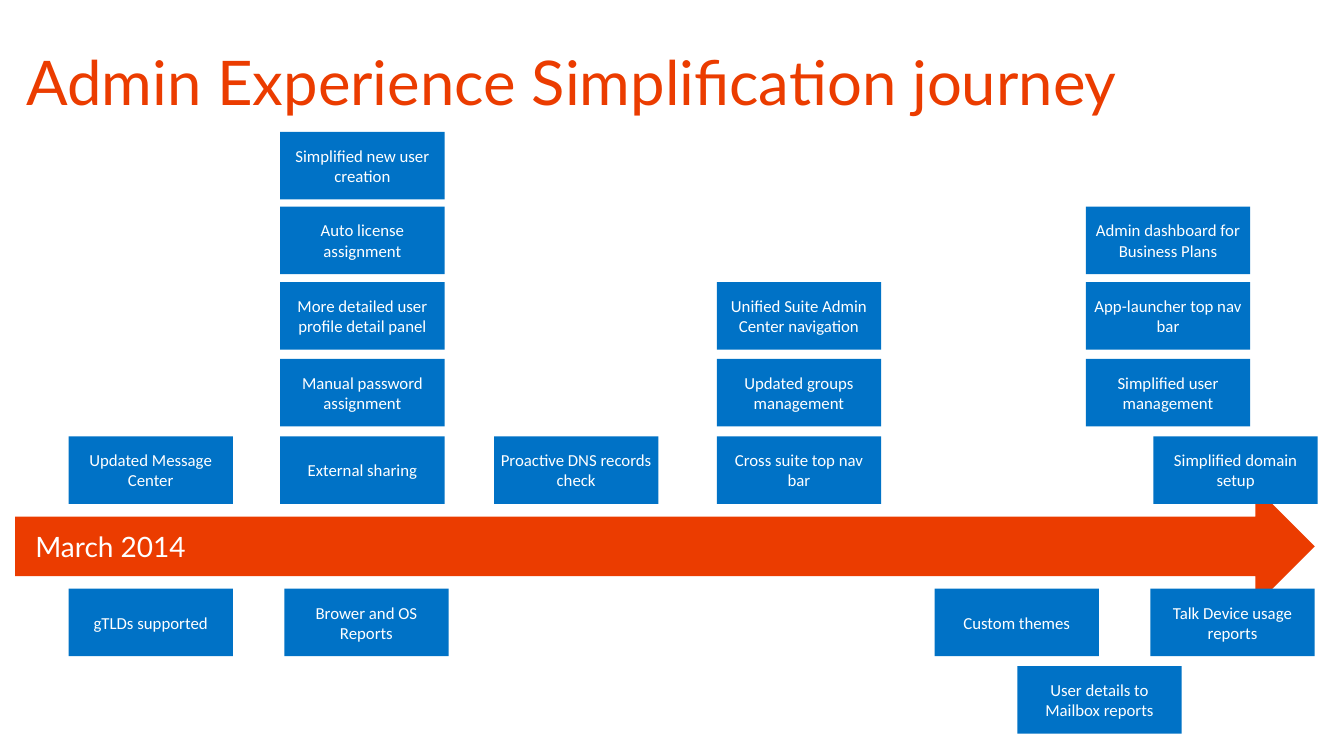
import pptx
import pptx.util
import pptx.dml.color
import pptx.enum.shapes
import pptx.enum.text

Inches = pptx.util.Inches
Pt = pptx.util.Pt
SHAPE = pptx.enum.shapes.MSO_SHAPE
ALIGN = pptx.enum.text.PP_ALIGN
MIDDLE = pptx.enum.text.MSO_ANCHOR.MIDDLE

ORANGE = pptx.dml.color.RGBColor(0xEB, 0x3C, 0x00)
BLUE = pptx.dml.color.RGBColor(0x00, 0x72, 0xC6)
WHITE = pptx.dml.color.RGBColor(0xFF, 0xFF, 0xFF)

CARD_W, CARD_H = 1.63, 0.67
# Row tops, counted outwards from the arrow
ROWS_ABOVE = (4.33, 3.56, 2.8, 2.05, 1.31)
ROWS_BELOW = (5.84, 6.61)

# (left, first row, texts from the arrow outwards)
STACKS_ABOVE = (
    (0.68, 0, ("Updated Message Center",)),
    (2.78, 0, ("External sharing", "Manual password assignment",
               "More detailed user profile detail panel",
               "Auto license assignment", "Simplified new user creation")),
    (4.9, 0, ("Proactive DNS records check",)),
    (7.11, 0, ("Cross suite top nav bar", "Updated groups management",
               "Unified Suite Admin Center navigation")),
    (10.77, 1, ("Simplified user management", "App-launcher top nav bar",
                "Admin dashboard for Business Plans")),
    (11.44, 0, ("Simplified domain setup",)),
)
STACKS_BELOW = (
    (0.68, 0, ("gTLDs supported",)),
    (2.82, 0, ("Brower and OS Reports",)),
    (9.27, 0, ("Custom themes",)),
    (10.09, 1, ("User details to Mailbox reports",)),
    (11.41, 0, ("Talk Device usage reports",)),
)


def set_text(sp, text, font, size, color, align):
    tf = sp.text_frame
    tf.word_wrap = True
    tf.vertical_anchor = MIDDLE
    p = tf.paragraphs[0]
    p.text = text
    p.alignment = align
    p.font.name = font
    p.font.size = Pt(size)
    p.font.color.rgb = color
    return tf


def add_filled_shape(s, kind, box, fill, left_inset=0.05):
    sp = s.shapes.add_shape(kind, *map(Inches, box))
    sp.shadow.inherit = False
    sp.fill.solid()
    sp.fill.fore_color.rgb = fill
    sp.line.fill.background()
    tf = sp.text_frame
    tf.margin_left = Inches(left_inset)
    tf.margin_top = tf.margin_right = tf.margin_bottom = Inches(0.05)
    return sp


def add_title(s, box, text):
    title = s.shapes.title
    title.left, title.top, title.width, title.height = map(Inches, box)
    tf = set_text(title, text, "Lato", 44, ORANGE, ALIGN.LEFT)
    tf.auto_size = pptx.enum.text.MSO_AUTO_SIZE.NONE
    tf.paragraphs[0].line_spacing = 0.9


def add_timeline(s, box, text):
    arrow = add_filled_shape(s, SHAPE.RIGHT_ARROW, box, ORANGE, left_inset=0.2)
    set_text(arrow, text, "Lato", 20, WHITE, ALIGN.LEFT)


def add_stacks(s, stacks, row_tops):
    for left, first_row, texts in stacks:
        for top, text in zip(row_tops[first_row:], texts):
            card = add_filled_shape(s, SHAPE.RECTANGLE,
                                    (left, top, CARD_W, CARD_H), BLUE)
            set_text(card, text, "Calibri", 12, WHITE, ALIGN.CENTER)


def main():
    prs = pptx.Presentation()
    prs.slide_width, prs.slide_height = Inches(13.33), Inches(7.5)
    s = prs.slides.add_slide(prs.slide_layouts[5])
    add_title(s, (0.16, 0.12, 11.5, 1.45),
              "Admin Experience Simplification journey")
    add_timeline(s, (0.15, 4.83, 12.89, 1.18), "March 2014")
    add_stacks(s, STACKS_ABOVE, ROWS_ABOVE)
    add_stacks(s, STACKS_BELOW, ROWS_BELOW)
    prs.save("out.pptx")


if __name__ == "__main__":
    main()
